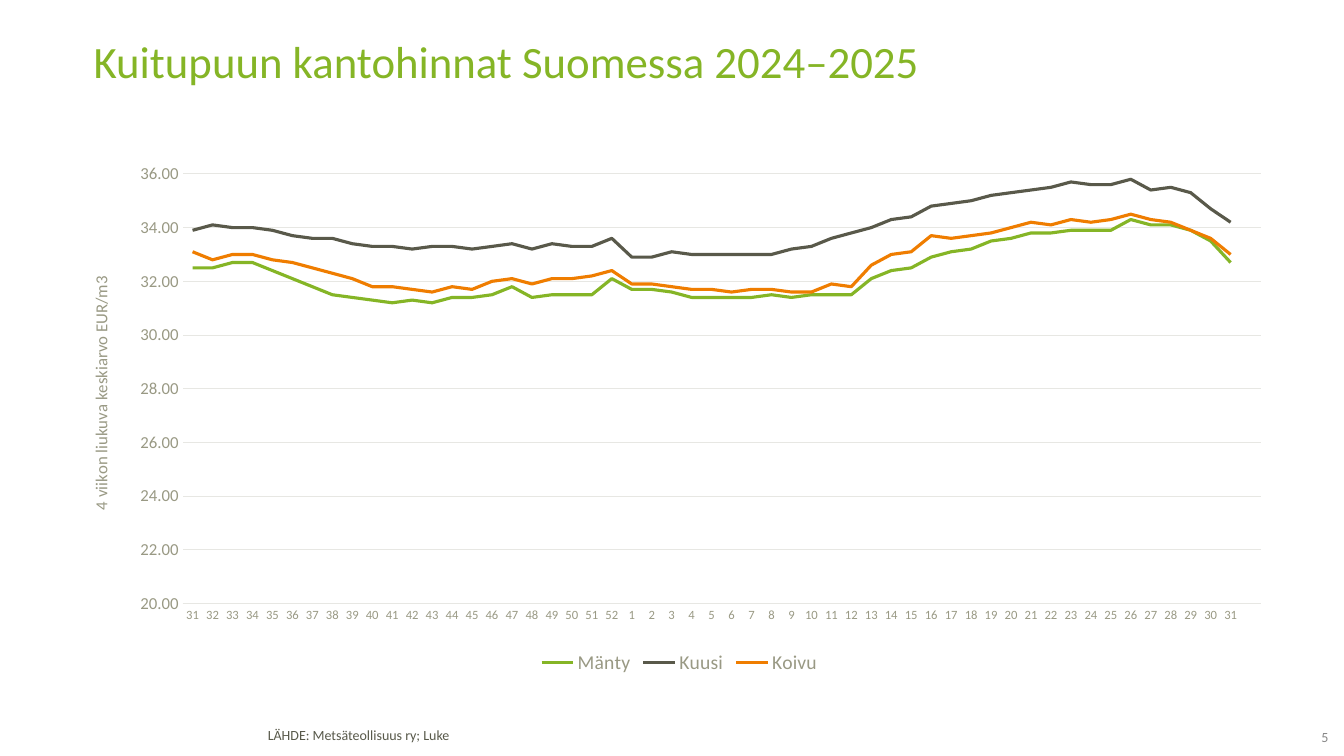
from lxml import etree
from pptx import Presentation
from pptx import util as u
from pptx.chart.data import CategoryChartData
from pptx.dml.color import RGBColor
from pptx.enum import chart as charts, text
from pptx.oxml import ns

FONT = "Calibri"
COLORS = {"title": "85B526", "source": "58594A", "number": "878787",
          "text": "59594A", "axis": "999984", "grid": "E7E7E3",
          "Mänty": "85B526", "Kuusi": "59594A", "Koivu": "EF7D00"}

WEEKS = [str(week) for week in [*range(31, 53), *range(1, 32)]] + [""]
PRICES = {
    "Mänty": [
        32.5, 32.5, 32.7, 32.7, 32.4, 32.1, 31.8, 31.5, 31.4, 31.3, 31.2,
        31.3, 31.2, 31.4, 31.4, 31.5, 31.8, 31.4, 31.5, 31.5, 31.5, 32.1,
        31.7, 31.7, 31.6, 31.4, 31.4, 31.4, 31.4, 31.5, 31.4, 31.5, 31.5,
        31.5, 32.1, 32.4, 32.5, 32.9, 33.1, 33.2, 33.5, 33.6, 33.8, 33.8,
        33.9, 33.9, 33.9, 34.3, 34.1, 34.1, 33.9, 33.5, 32.7, None],
    "Kuusi": [
        33.9, 34.1, 34, 34, 33.9, 33.7, 33.6, 33.6, 33.4, 33.3, 33.3,
        33.2, 33.3, 33.3, 33.2, 33.3, 33.4, 33.2, 33.4, 33.3, 33.3, 33.6,
        32.9, 32.9, 33.1, 33, 33, 33, 33, 33, 33.2, 33.3, 33.6,
        33.8, 34, 34.3, 34.4, 34.8, 34.9, 35, 35.2, 35.3, 35.4, 35.5,
        35.7, 35.6, 35.6, 35.8, 35.4, 35.5, 35.3, 34.7, 34.2, None],
    "Koivu": [
        33.1, 32.8, 33, 33, 32.8, 32.7, 32.5, 32.3, 32.1, 31.8, 31.8,
        31.7, 31.6, 31.8, 31.7, 32, 32.1, 31.9, 32.1, 32.1, 32.2, 32.4,
        31.9, 31.9, 31.8, 31.7, 31.7, 31.6, 31.7, 31.7, 31.6, 31.6, 31.9,
        31.8, 32.6, 33, 33.1, 33.7, 33.6, 33.7, 33.8, 34, 34.2, 34.1,
        34.3, 34.2, 34.3, 34.5, 34.3, 34.2, 33.9, 33.6, 33, None],
}


def rgb(name):
    return RGBColor.from_string(COLORS[name])


def style_font(font, size, color):
    font.name, font.size, font.bold = FONT, u.Pt(size), False
    font.color.rgb = rgb(color)


def style_line(line, width, color):
    line.width = u.Pt(width)
    line.color.rgb = rgb(color)


def add_text(page, place, words, size, color, spacing=1.0, align=text.PP_ALIGN.LEFT):
    box = page.shapes.add_textbox(*map(u.Cm, place))
    frame = box.text_frame
    frame.word_wrap = True
    frame.text = words
    para = frame.paragraphs[0]
    para.alignment, para.line_spacing = align, spacing
    style_font(para.runs[0].font, size, color)
    return frame


def set_plot_layout(chart, **place):
    """Fix the inner plot area, in fractions of the chart."""
    area = chart._chartSpace.find(".//" + ns.qn("c:plotArea"))
    for old in area.findall(ns.qn("c:layout")):
        area.remove(old)
    layout = etree.Element(ns.qn("c:layout"))
    manual = etree.SubElement(layout, ns.qn("c:manualLayout"))
    settings = {"layoutTarget": "inner", "xMode": "edge", "yMode": "edge", **place}
    for tag, value in settings.items():
        etree.SubElement(manual, ns.qn("c:" + tag)).set("val", str(value))
    area.insert(0, layout)


def style_week_axis(axis):
    axis.major_tick_mark = charts.XL_TICK_MARK.NONE
    style_font(axis.tick_labels.font, 9, "axis")
    style_line(axis.format.line, 0.75, "grid")


def style_price_axis(axis):
    axis.minimum_scale, axis.maximum_scale, axis.major_unit = 20, 36, 2
    axis.major_tick_mark = charts.XL_TICK_MARK.NONE
    axis.format.line.fill.background()
    style_line(axis.major_gridlines.format.line, 0.75, "grid")
    style_font(axis.tick_labels.font, 12, "axis")
    axis.tick_labels.number_format = "#,##0.00"
    axis.tick_labels.number_format_is_linked = False
    frame = axis.axis_title.text_frame
    frame.text = "4 viikon liukuva keskiarvo EUR/m3"
    frame._txBody.bodyPr.set("rot", "-5400000")
    style_font(frame.paragraphs[0].runs[0].font, 12, "axis")


def add_price_chart(page, place):
    data = CategoryChartData(number_format="0.0")
    data.categories = WEEKS
    for name, values in PRICES.items():
        data.add_series(name, values)
    chart = page.shapes.add_chart(
        charts.XL_CHART_TYPE.LINE, *map(u.Cm, place), data).chart
    style_font(chart.font, 10, "text")
    chart.has_title = False
    chart.has_legend = True
    chart.legend.position = charts.XL_LEGEND_POSITION.BOTTOM
    chart.legend.include_in_layout = False
    style_font(chart.legend.font, 14, "axis")
    chart.plots[0].vary_by_categories = False
    for series in chart.plots[0].series:
        series.smooth = False
        style_line(series.format.line, 2.25, series.name)
    style_week_axis(chart.category_axis)
    style_price_axis(chart.value_axis)
    set_plot_layout(chart, x=0.083, y=0.03, w=0.905, h=0.826)


def main():
    deck = Presentation()
    deck.slide_width, deck.slide_height = u.Cm(33.87), u.Cm(19.05)
    page = deck.slides.add_slide(deck.slide_layouts[6])
    add_text(page, (6.5, 18.24, 18.24, 0.69),
             "LÄHDE: Metsäteollisuus ry; Luke", 10, "source", 0.85)
    number = add_text(page, (32.13, 18.39, 1.35, 0.48), "5", 10, "number",
                      align=text.PP_ALIGN.RIGHT)
    number.margin_left = number.margin_right = number.margin_top = 0
    number.margin_bottom = u.Cm(0.1)
    number.vertical_anchor = text.MSO_ANCHOR.MIDDLE
    add_text(page, (2.11, 0.99, 29.69, 2.49),
             "Kuitupuun kantohinnat Suomessa 2024–2025", 32, "title", 0.8)
    add_price_chart(page, (2.11, 3.99, 30.02, 13.11))
    deck.save("out.pptx")


if __name__ == "__main__":
    main()
